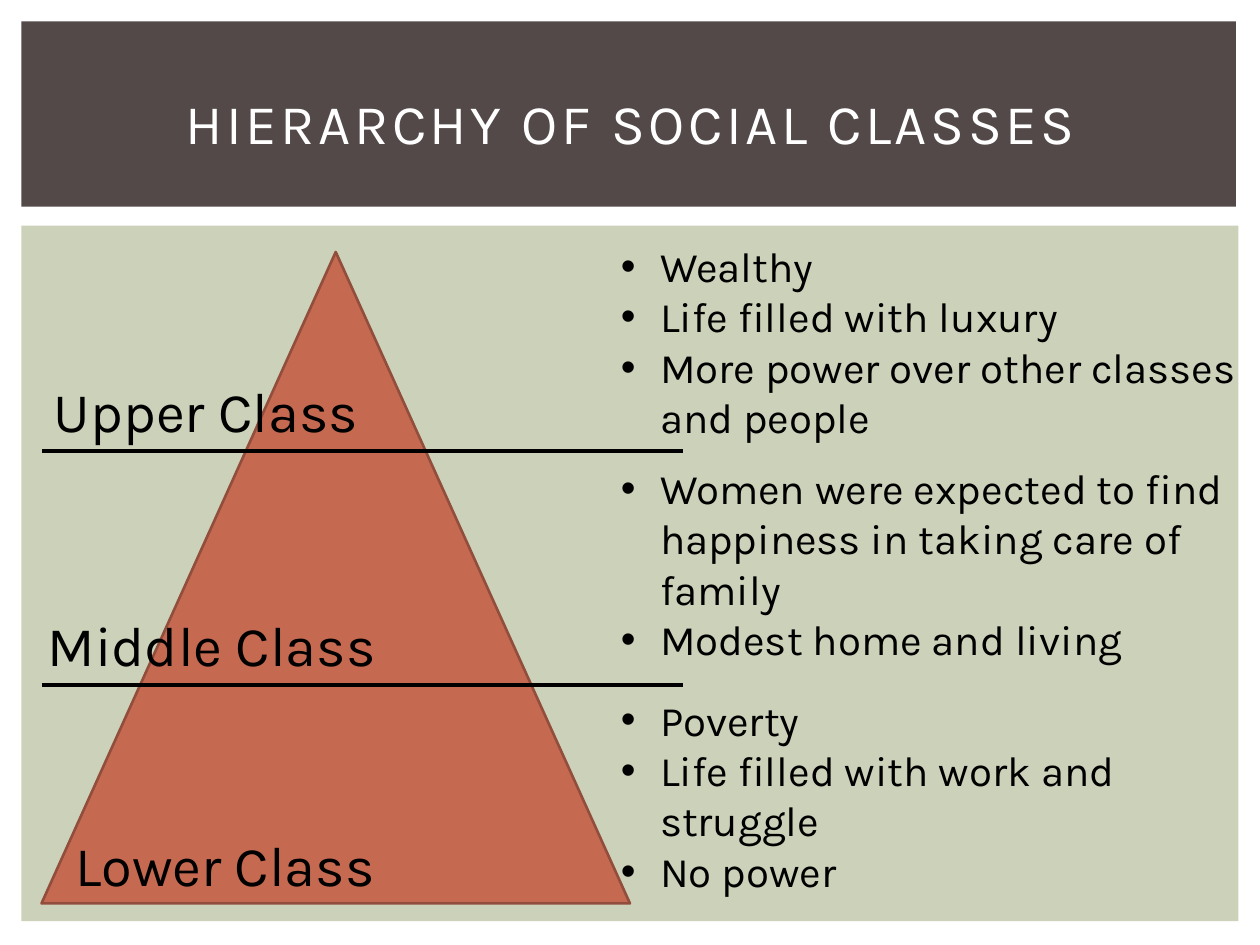
from dataclasses import dataclass

from lxml import etree
from pptx import Presentation
from pptx.dml.color import RGBColor
from pptx.enum.shapes import MSO_CONNECTOR, MSO_SHAPE
from pptx.enum.text import MSO_ANCHOR, PP_ALIGN
from pptx.oxml.ns import qn
from pptx.util import Inches, Pt

RECT, CONE = MSO_SHAPE.RECTANGLE, MSO_SHAPE.ISOSCELES_TRIANGLE
LINE = MSO_CONNECTOR.STRAIGHT
MIDDLE, CENTER = MSO_ANCHOR.MIDDLE, PP_ALIGN.CENTER


@dataclass(frozen=True)
class Theme:
    """Hold the colours, font and type sizes of the slide."""
    font: str = "Karla"
    head: int = 32
    body: int = 24
    white: str = "FFFFFF"
    black: str = "000000"
    sage: str = "CCD1B9"
    brown: str = "534949"
    rust: str = "C66951"
    edge: str = "924E3C"


THEME = Theme()

TIERS = [
    ("Upper Class", 0.33, 2.94, 1.86,
     ["Wealthy", "Life filled with luxury",
      "More power over other classes and people"]),
    ("Middle Class", 0.28, 4.8, 3.62,
     ["Women were expected to find happiness in taking care of family",
      "Modest home and living"]),
    ("Lower Class", 0.5, 6.54, 5.46,
     ["Poverty", "Life filled with work and struggle", "No power"]),
]


def style(par, size, color):
    """Set the font of a paragraph."""
    par.font.name = THEME.font
    par.font.size = Pt(size)
    par.font.color.rgb = RGBColor.from_string(color)


def add_block(slide, kind, box, fill, edge=None):
    """Add a filled shape, outlined if an edge colour is given."""
    shape = slide.shapes.add_shape(kind, *map(Inches, box))
    shape.shadow.inherit = False
    shape.fill.solid()
    shape.fill.fore_color.rgb = RGBColor.from_string(fill)
    if edge:
        shape.line.color.rgb = RGBColor.from_string(edge)
        shape.line.width = Pt(1.5)
    else:
        shape.line.fill.background()


def add_rule(slide, y):
    """Add a level line that parts two classes."""
    rule = slide.shapes.add_connector(
        LINE, Inches(0.33), Inches(y), Inches(5.42), Inches(y))
    rule.line.color.rgb = RGBColor.from_string(THEME.black)
    rule.line.width = Pt(2.25)
    etree.SubElement(rule._element.spPr, qn("a:effectLst"))


def add_bullet(par):
    """Give a paragraph a hanging round bullet."""
    props = par._p.get_or_add_pPr()
    props.set("marL", str(Inches(0.31)))
    props.set("indent", str(-Inches(0.31)))
    font = etree.Element(qn("a:buFont"), typeface="Arial")
    props.insert(0, font)
    font.addnext(etree.Element(qn("a:buChar"), char="•"))


def add_text(slide, box, lines, size, bullet=False):
    """Add a text box with one paragraph for each line."""
    frame = slide.shapes.add_textbox(*map(Inches, box)).text_frame
    frame.word_wrap = True
    frame.text = "\n".join(lines)
    for par in frame.paragraphs:
        style(par, size, THEME.black)
        if bullet:
            add_bullet(par)


def set_title(slide, text):
    """Fill the title and bring it in front of its band."""
    title = slide.shapes.title
    title.left, title.top = Inches(0.42), Inches(0.39)
    title.width, title.height = Inches(9.17), Inches(1.15)
    frame = title.text_frame
    frame.text = text
    frame.vertical_anchor = MIDDLE
    par = frame.paragraphs[0]
    par.alignment = CENTER
    style(par, THEME.head, THEME.white)
    par.runs[0].font._element.set("spc", "200")
    slide.shapes._spTree.append(title._element)


def main():
    """Build the slide and save it."""
    deck = Presentation()
    deck.slide_width, deck.slide_height = Inches(10), Inches(7.5)
    slide = deck.slides.add_slide(deck.slide_layouts[5])
    add_block(slide, RECT, (0.17, 1.79, 9.66, 5.52), THEME.sage)
    add_block(slide, RECT, (0.17, 0.17, 9.64, 1.47), THEME.brown)
    set_title(slide, "HIERARCHY OF SOCIAL CLASSES")
    add_block(slide, CONE, (0.33, 2, 4.67, 5.17), THEME.rust, THEME.edge)
    for y in (3.58, 5.44):
        add_rule(slide, y)
    for name, left, top, list_top, facts in TIERS:
        add_text(slide, (left, top, 2.92, 0.64), [name], THEME.head)
        add_text(slide, (4.83, list_top, 5.08, 1.72), facts, THEME.body, True)
    deck.save("out.pptx")


if __name__ == "__main__":
    main()
